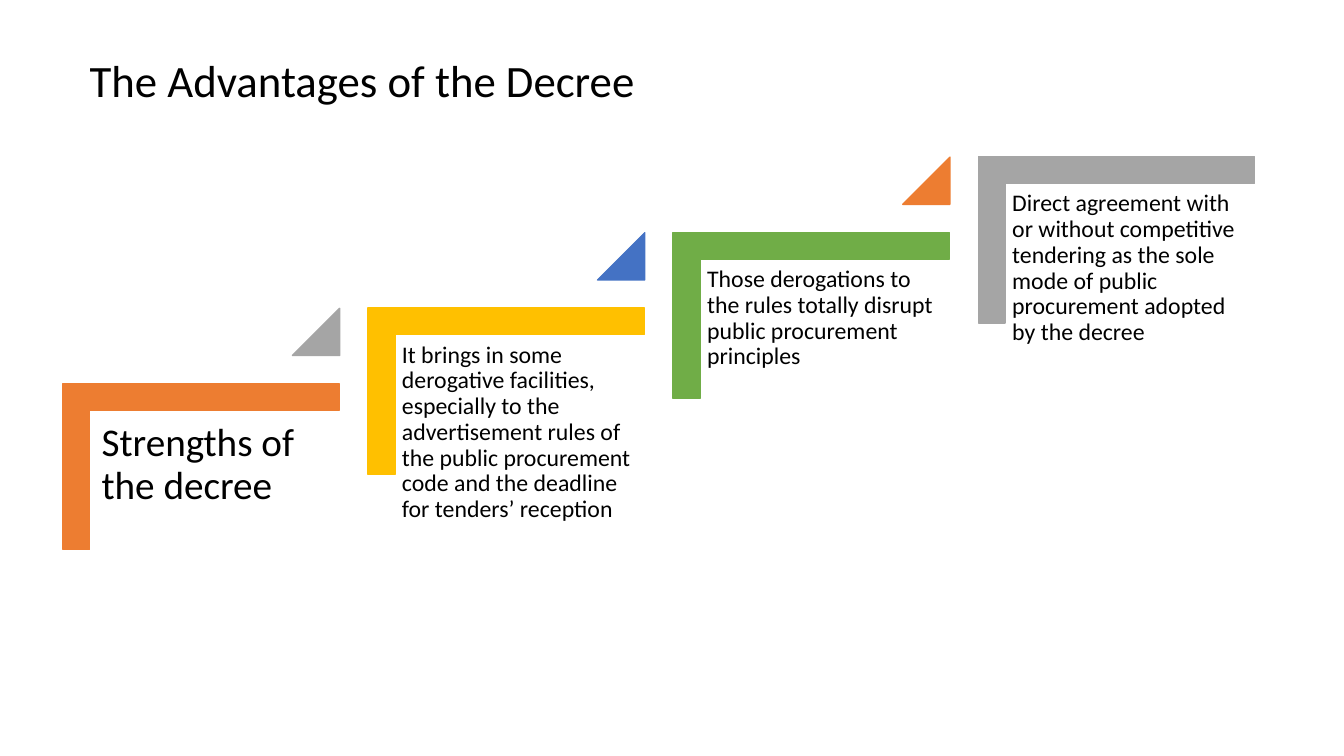
from pptx import Presentation
from pptx.dml.color import RGBColor
from pptx.enum.shapes import MSO_SHAPE as Shape
from pptx.enum.text import MSO_ANCHOR as Anchor
from pptx.util import Cm, Pt

BLACK = RGBColor(0, 0, 0)
ORANGE = RGBColor(0xED, 0x7D, 0x31)
GREY = RGBColor(0xA5, 0xA5, 0xA5)
GOLD = RGBColor(0xFF, 0xC0, 0x00)
BLUE = RGBColor(0x44, 0x72, 0xC4)
GREEN = RGBColor(0x70, 0xAD, 0x47)

TITLE = "The Advantages of the Decree"
STEPS = [
    ("Strengths of the decree", 28, 0.3, ORANGE, GREY),
    ("It brings in some derogative facilities, especially to the "
     "advertisement rules of the public procurement code and the "
     "deadline for tenders’ reception", 17, 0.18, GOLD, BLUE),
    ("Those derogations to the rules totally disrupt public "
     "procurement principles", 17, 0.18, GREEN, ORANGE),
    ("Direct agreement with or without competitive tendering as the "
     "sole mode of public procurement adopted by the decree",
     17, 0.18, GREY, None),
]
RUN, RISE = 7.69, 1.905

deck = Presentation()
deck.slide_width, deck.slide_height = Cm(33.87), Cm(19.05)
slide = deck.slides.add_slide(deck.slide_layouts[6])


def add_text(text, box, size=17, pad=(0.18, 0.18), anchor=Anchor.TOP, after=0):
    frame = slide.shapes.add_textbox(*map(Cm, box)).text_frame
    frame.word_wrap = True
    frame.vertical_anchor = anchor
    frame.margin_left = frame.margin_right = Cm(pad[0])
    frame.margin_top = frame.margin_bottom = Cm(pad[1])
    para = frame.paragraphs[0]
    para.line_spacing = 0.9
    para.space_after = Pt(after)
    run = para.add_run()
    run.text = text
    run.font.name = "Calibri"
    run.font.size = Pt(size)
    run.font.color.rgb = BLACK


def add_mark(kind, box, color, adjust, turn=0):
    mark = slide.shapes.add_shape(kind, *map(Cm, box))
    mark.shadow.inherit = False
    mark.rotation = turn
    mark.fill.solid()
    mark.fill.fore_color.rgb = color
    mark.line.color.rgb = color
    mark.line.width = Pt(1)
    for i, value in enumerate(adjust):
        mark.adjustments[i] = value


add_text(TITLE, (2.01, 0.25, 29.21, 3.68), size=32, pad=(0.25, 0.13),
         anchor=Anchor.MIDDLE)

for i, (text, size, pad, color, accent) in enumerate(STEPS):
    x, y = i * RUN, -i * RISE
    add_mark(Shape.CORNER, (2.97 + x, 8.28 + y, 4.19, 6.96), color,
             (0.161, 0.161), turn=90)
    add_text(text, (2.26 + x, 10.36 + y, 6.27, 5.51), size=size,
             pad=(pad, pad), after=round(size * 0.35))
    if accent:
        add_mark(Shape.ISOSCELES_TRIANGLE, (7.37 + x, 7.77 + y, 1.19, 1.19),
                 accent, (1,))

deck.save("out.pptx")
